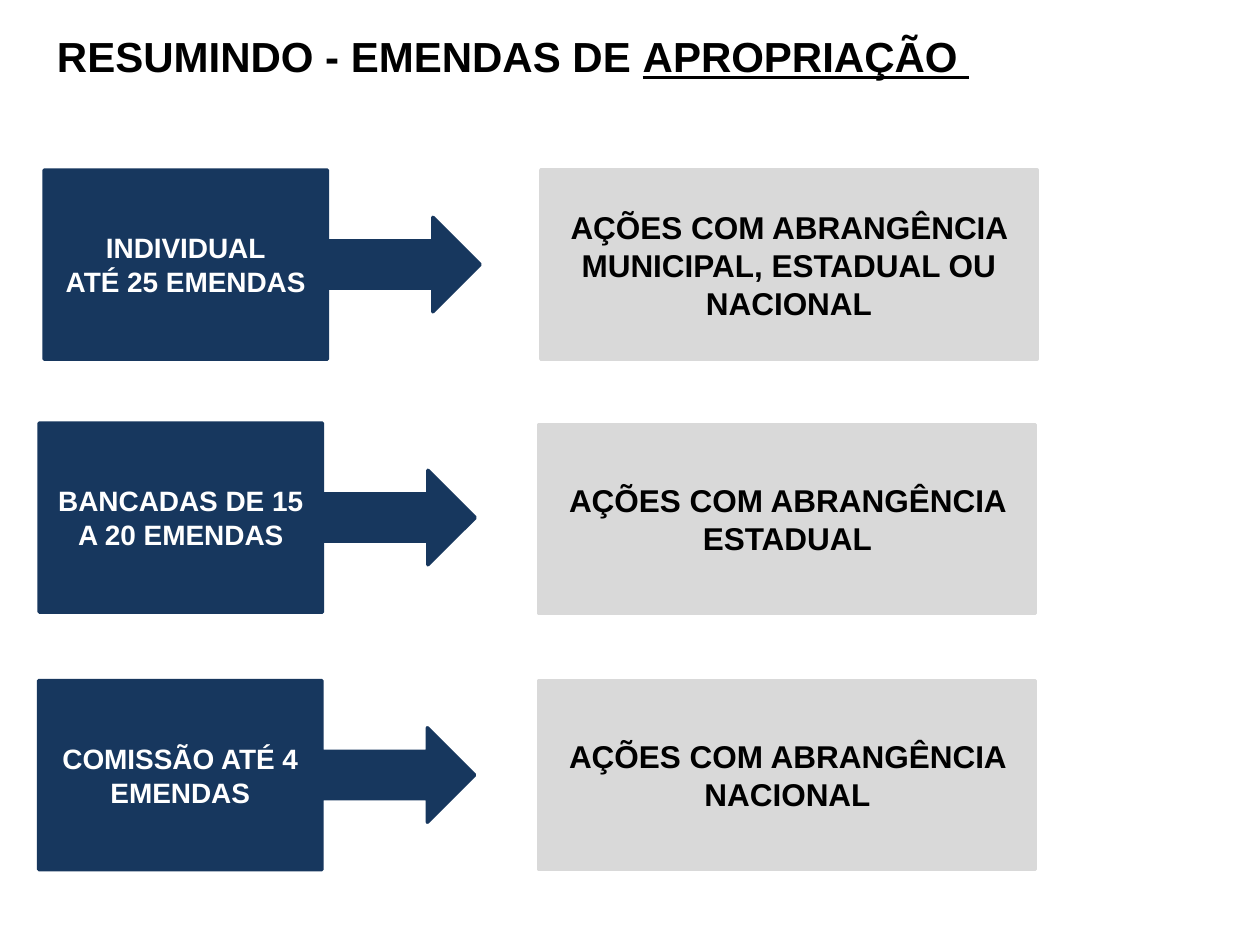
from pptx import Presentation
from pptx.dml.color import RGBColor
from pptx.enum.shapes import MSO_SHAPE as Shape
from pptx.enum.text import MSO_ANCHOR as Anchor, MSO_AUTO_SIZE as AutoSize, PP_ALIGN as Align
from pptx.util import Cm, Pt

NAVY = RGBColor(0x17, 0x37, 0x5E)
GRAY = RGBColor(0xD9, 0xD9, 0xD9)
BLACK = RGBColor(0, 0, 0)
WHITE = RGBColor(0xFF, 0xFF, 0xFF)

# Content: (text, underlined) for the title; each row pairs an author with a scope,
# given as (left, top, paragraphs) with lengths in cm
TITLE = [("RESUMINDO - EMENDAS DE ", False), ("APROPRIAÇÃO ", True)]
ROWS = [
    ((0.89, 3.43, ["INDIVIDUAL", "ATÉ 25 EMENDAS"]),
     (10.9, 3.43, ["AÇÕES COM ABRANGÊNCIA MUNICIPAL, ESTADUAL OU NACIONAL"])),
    ((0.79, 8.53, ["BANCADAS DE 15", "A 20 EMENDAS"]),
     (10.87, 8.56, ["AÇÕES COM ABRANGÊNCIA ESTADUAL"])),
    ((0.78, 13.72, ["COMISSÃO ATÉ 4 EMENDAS"]),
     (10.87, 13.72, ["AÇÕES COM ABRANGÊNCIA NACIONAL"])),
]
BOX_HEIGHT = 3.81
# Shape kind, width in cm, fill, text colour, text size
AUTHOR_STYLE = (Shape.RIGHT_ARROW_CALLOUT, 8.79, NAVY, WHITE, 16)
SCOPE_STYLE = (Shape.RECTANGLE, 10.01, GRAY, BLACK, 18)


def set_font(paragraph, size, color):
    font = paragraph.font
    font.name, font.size, font.bold = "Arial", Pt(size), True
    font.color.rgb = color


def add_box(slide, box, style):
    left, top, texts = box
    kind, width, fill, color, size = style
    shape = slide.shapes.add_shape(kind, Cm(left), Cm(top), Cm(width), Cm(BOX_HEIGHT))
    shape.shadow.inherit = False
    shape.fill.solid()
    shape.fill.fore_color.rgb = fill
    shape.line.color.rgb = fill
    shape.line.width = Pt(2)
    frame = shape.text_frame
    frame.word_wrap = True
    frame.vertical_anchor = Anchor.MIDDLE
    for index, text in enumerate(texts):
        paragraph = frame.add_paragraph() if index else frame.paragraphs[0]
        paragraph.text = text
        paragraph.alignment = Align.CENTER
        set_font(paragraph, size, color)


def main():
    presentation = Presentation()
    presentation.slide_width, presentation.slide_height = Cm(25.4), Cm(19.05)
    slide = presentation.slides.add_slide(presentation.slide_layouts[6])

    # Title
    title = slide.shapes.add_textbox(Cm(0.9), Cm(0.5), Cm(19.2), Cm(1.28))
    title.text_frame.word_wrap = True
    title.text_frame.auto_size = AutoSize.SHAPE_TO_FIT_TEXT
    paragraph = title.text_frame.paragraphs[0]
    set_font(paragraph, 24, BLACK)
    for text, underlined in TITLE:
        run = paragraph.add_run()
        run.text = text
        if underlined:
            run.font.underline = True

    # Authors first, then the scope of their amendments
    for author, _ in ROWS:
        add_box(slide, author, AUTHOR_STYLE)
    for _, scope in ROWS:
        add_box(slide, scope, SCOPE_STYLE)

    presentation.save("out.pptx")


if __name__ == "__main__":
    main()
